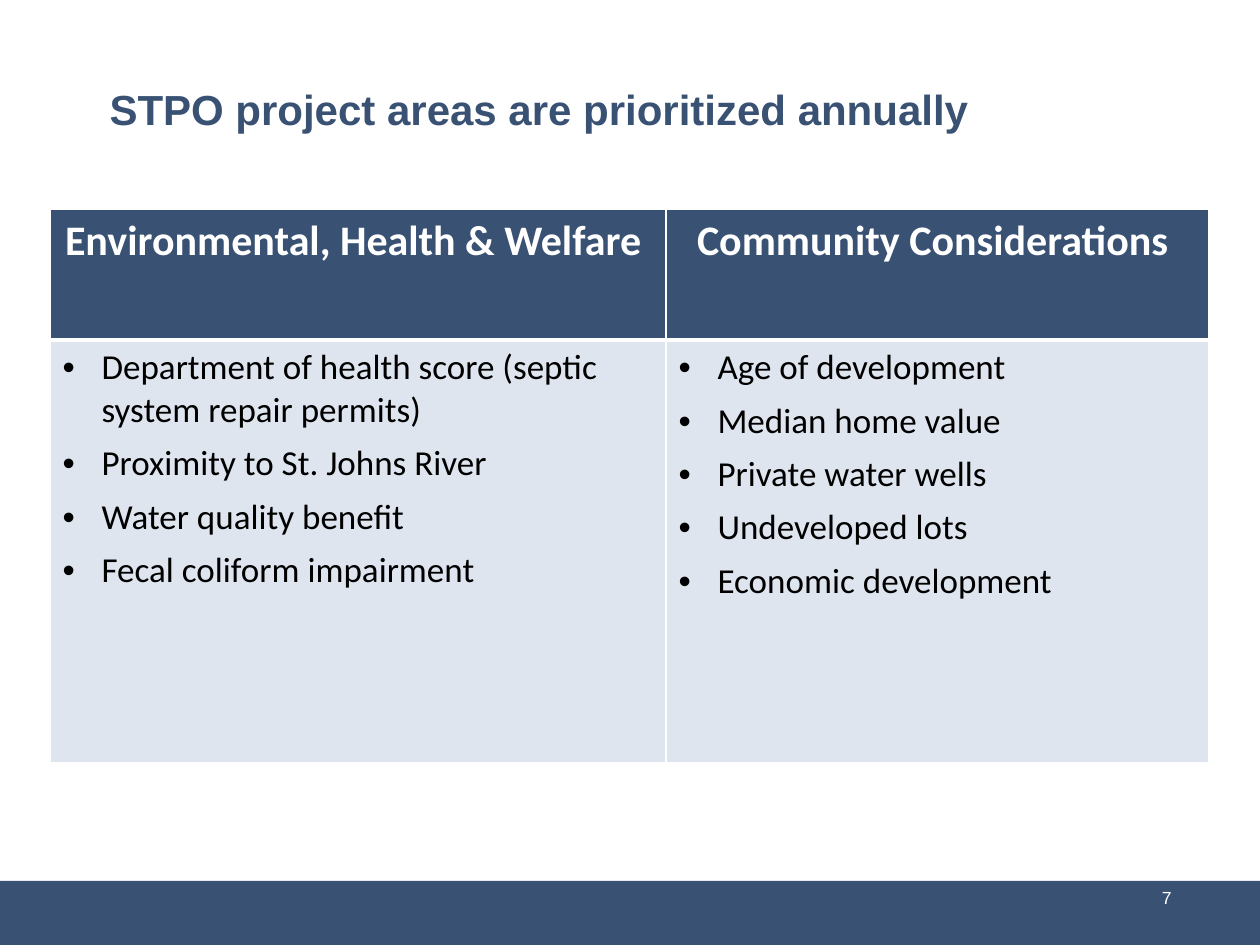
"""Build the slide on how STPO project areas are prioritized."""
import pptx
import pptx.dml.color
import pptx.enum.shapes
import pptx.enum.text
import pptx.oxml
import pptx.oxml.ns
import pptx.util

PX = 914400 // 126
NAVY = pptx.dml.color.RGBColor(0x39, 0x51, 0x73)
PALE = pptx.dml.color.RGBColor(0xD2, 0xDB, 0xE9)
WHITE = pptx.dml.color.RGBColor(255, 255, 255)
BLACK = pptx.dml.color.RGBColor(0, 0, 0)
ALIGN = pptx.enum.text.PP_ALIGN
MIDDLE = pptx.enum.text.MSO_ANCHOR.MIDDLE
NS = pptx.oxml.ns.nsdecls("a")

TITLE = {"name": "Arial", "size": pptx.util.Pt(24), "bold": True}
NUMBER = {"name": "Arial", "size": pptx.util.Pt(10), "bold": False}
HEADER = {"name": "Calibri", "size": pptx.util.Pt(24), "bold": True}
ITEM = {"name": "Calibri", "size": pptx.util.Pt(20), "bold": False}

COLUMNS = [
    ("Environmental, Health & Welfare ", 616, [
        "Department of health score (septic system repair permits)",
        "Proximity to St. Johns River",
        "Water quality benefit",
        "Fecal coliform impairment",
    ]),
    ("Community Considerations ", 543, [
        "Age of development",
        "Median home value",
        "Private water wells",
        "Undeveloped lots",
        "Economic development",
    ]),
]


def write(para, text, style, color, align):
    para.alignment = align
    span = para.add_run()
    span.text = text
    for name, value in style.items():
        setattr(span.font, name, value)
    span.font.color.rgb = color


def fill_cell(cell, color, widths):
    properties = cell._tc.get_or_add_tcPr()
    for side, points in widths.items():
        properties.append(pptx.oxml.parse_xml(
            f'<a:ln{side} {NS} w="{points * 12700}"><a:solidFill>'
            f'<a:srgbClr val="{WHITE}"/></a:solidFill></a:ln{side}>'))
    cell.fill.solid()
    cell.fill.fore_color.rgb = color


deck = pptx.Presentation()
deck.slide_width, deck.slide_height = 1260 * PX, 945 * PX
page = deck.slides.add_slide(deck.slide_layouts[5])

band = page.shapes.add_shape(
    pptx.enum.shapes.MSO_SHAPE.RECTANGLE, 0, 881 * PX, 1260 * PX, 64 * PX)
band.shadow.inherit = False
band.fill.solid()
band.fill.fore_color.rgb = NAVY
band.line.fill.background()

title = page.shapes.title
title.left, title.top, title.width, title.height = 97 * PX, 72 * PX, 1087 * PX, 73 * PX
title.text_frame.vertical_anchor = MIDDLE
write(title.text_frame.paragraphs[0], "STPO project areas are prioritized annually",
      TITLE, NAVY, ALIGN.LEFT)

number = page.shapes.add_textbox(901 * PX, 873 * PX, 283 * PX, 50 * PX)
number.text_frame.word_wrap = True
number.text_frame.vertical_anchor = MIDDLE
write(number.text_frame.paragraphs[0], "7", NUMBER, WHITE, ALIGN.RIGHT)

table = page.shapes.add_table(2, 2, 50 * PX, 209 * PX, 1159 * PX, 554 * PX).table
table.rows[0].height, table.rows[1].height = 131 * PX, 423 * PX
for index, (heading, width, items) in enumerate(COLUMNS):
    table.columns[index].width = width * PX
    head, body = table.cell(0, index), table.cell(1, index)
    fill_cell(head, NAVY, {"L": 1, "R": 1, "T": 1, "B": 3})
    write(head.text_frame.paragraphs[0], heading, HEADER, WHITE, ALIGN.CENTER)

    fill_cell(body, PALE, {"L": 1, "R": 1, "T": 3, "B": 1})
    tint = body._tc.tcPr.find("a:solidFill/a:srgbClr", {"a": pptx.oxml.ns.nsuri("a")})
    tint.append(pptx.oxml.parse_xml(f'<a:alpha {NS} val="70000"/>'))
    for order, item in enumerate(items):
        frame = body.text_frame
        para = frame.add_paragraph() if order else frame.paragraphs[0]
        layout = para._p.get_or_add_pPr()
        layout.set("marL", str(39 * PX))
        layout.set("indent", str(-39 * PX))
        layout.append(pptx.oxml.parse_xml(f'<a:buFont {NS} typeface="Arial"/>'))
        layout.append(pptx.oxml.parse_xml(f'<a:buChar {NS} char="•"/>'))
        para.space_after = pptx.util.Pt(6)
        write(para, item, ITEM, BLACK, ALIGN.LEFT)

deck.save("out.pptx")
